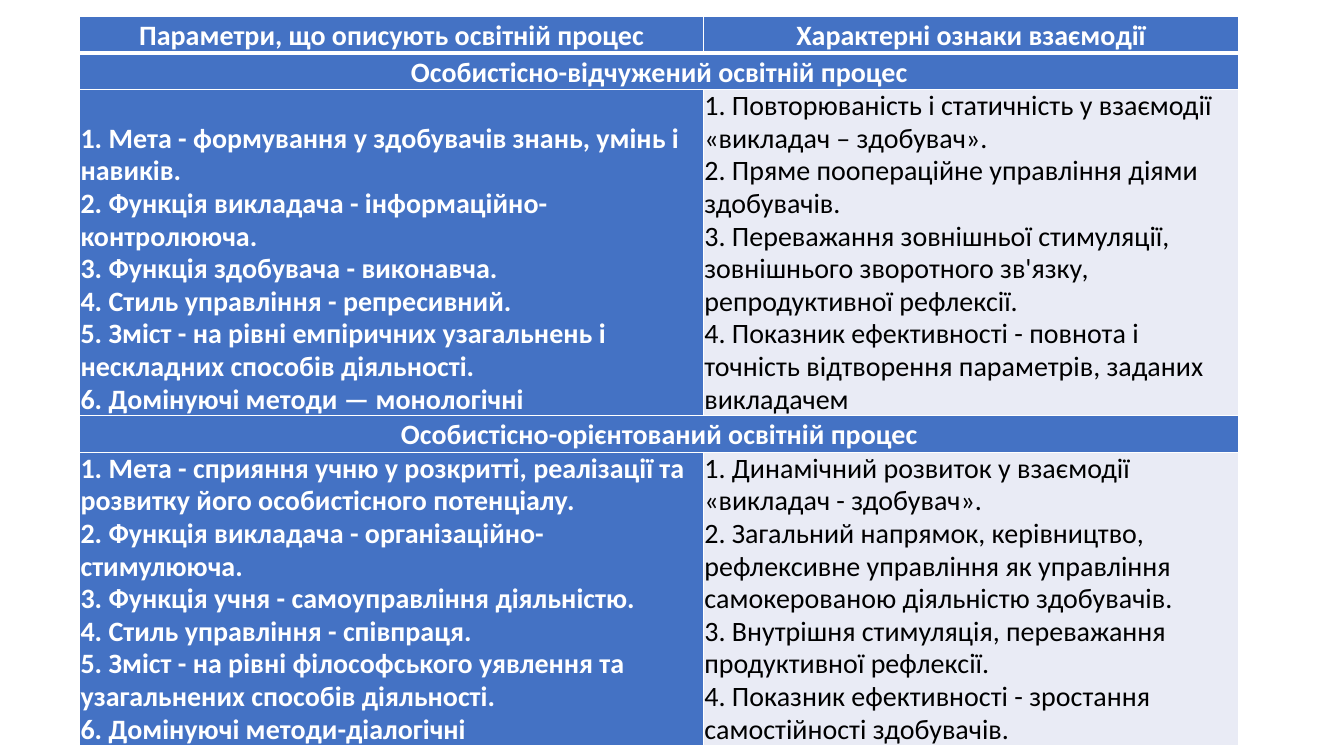
from lxml import etree
from pptx import Presentation
from pptx import util as u
from pptx.dml.color import RGBColor
from pptx.enum import text
from pptx.oxml.ns import qn

BLUE, PALE, WHITE, BLACK = "4472C4", "E9EBF5", "FFFFFF", "000000"

ALIENATED_PARAMETERS = """1. Мета - формування у здобувачів знань, умінь і навиків.
2. Функція викладача - інформаційно-контролююча.
3. Функція здобувача - виконавча.
4. Стиль управління - репресивний.
5. Зміст - на рівні емпіричних узагальнень і нескладних способів діяльності.
6. Домінуючі методи — монологічні"""

ALIENATED_FEATURES = """1. Повторюваність і статичність у взаємодії «викладач – здобувач».
2. Пряме поопераційне управління діями здобувачів.
3. Переважання зовнішньої стимуляції, зовнішнього зворотного зв'язку, репродуктивної рефлексії.
4. Показник ефективності - повнота і точність відтворення параметрів, заданих викладачем"""

ORIENTED_PARAMETERS = """1. Мета - сприяння учню у розкритті, реалізації та розвитку його особистісного потенціалу.
2. Функція викладача - організаційно-стимулююча.
3. Функція учня - самоуправління діяльністю.
4. Стиль управління - співпраця.
5. Зміст - на рівні філософського уявлення та узагальнених способів діяльності.
6. Домінуючі методи-діалогічні"""

ORIENTED_FEATURES = """1. Динамічний розвиток у взаємодії «викладач - здобувач».
2. Загальний напрямок, керівництво, рефлексивне управління як управління самокерованою діяльністю здобувачів.
3. Внутрішня стимуляція, переважання продуктивної рефлексії.
4. Показник ефективності - зростання самостійності здобувачів."""

ROWS = [
    (0.92, ["Параметри, що описують освітній процес", "Характерні ознаки взаємодії"]),
    (0.92, ["Особистісно-відчужений освітній процес"]),
    (8.18, [ALIENATED_PARAMETERS, ALIENATED_FEATURES]),
    (0.92, ["Особистісно-орієнтований освітній процес"]),
    (7.37, [ORIENTED_PARAMETERS, ORIENTED_FEATURES]),
]
COLUMN_WIDTHS = [15.72, 13.49]


def rgb(value):
    """Return the colour for a hex string."""
    return RGBColor.from_string(value)


def set_borders(cell, widths):
    """Draw white cell borders, with widths in points by side letter."""
    properties = cell._tc.get_or_add_tcPr()
    for side, width in widths.items():
        line = etree.SubElement(properties, qn(f"a:ln{side}"), w=str(u.Pt(width)))
        fill = etree.SubElement(line, qn("a:solidFill"))
        etree.SubElement(fill, qn("a:srgbClr"), val=WHITE)


def fill_cell(cell, wording, background, heading):
    """Write a cell's paragraphs and format them as a heading or a list."""
    cell.fill.solid()
    cell.fill.fore_color.rgb = rgb(background)
    cell.vertical_anchor = text.MSO_ANCHOR.BOTTOM
    cell.margin_left = cell.margin_right = u.Cm(0.02)
    cell.margin_top = cell.margin_bottom = 0
    cell.text_frame.text = wording
    for paragraph in cell.text_frame.paragraphs:
        paragraph.alignment = text.PP_ALIGN.CENTER if heading else text.PP_ALIGN.LEFT
        paragraph.line_spacing = 1.07 if heading else 0.95
        for run in paragraph.runs:
            run.font.name = "Calibri"
            run.font.size = u.Pt(20)
            run.font.bold = background == BLUE
            run.font.color.rgb = rgb(WHITE if background == BLUE else BLACK)


def add_comparison(slide):
    """Add the table comparing the two kinds of educational process."""
    heights = [height for height, _ in ROWS]
    comparison = slide.shapes.add_table(
        len(ROWS), len(COLUMN_WIDTHS), u.Cm(2.01), u.Cm(0.41),
        u.Cm(sum(COLUMN_WIDTHS)), u.Cm(sum(heights))).table
    for column, width in zip(comparison.columns, COLUMN_WIDTHS):
        column.width = u.Cm(width)
    for index, (height, wordings) in enumerate(ROWS):
        comparison.rows[index].height = u.Cm(height)
        widths = {"L": 1, "R": 1, "T": 3 if index == 1 else 1, "B": 3 if index == 0 else 1}
        for cell in comparison.rows[index].cells:
            set_borders(cell, widths)
        if len(wordings) == 1:
            comparison.cell(index, 0).merge(comparison.cell(index, 1))
        heading = index == 0 or len(wordings) == 1
        for position, wording in enumerate(wordings):
            background = BLUE if heading or position == 0 else PALE
            fill_cell(comparison.cell(index, position), wording, background, heading)


def main():
    """Build the slide and save it."""
    deck = Presentation()
    deck.slide_width, deck.slide_height = u.Cm(33.87), u.Cm(19.05)
    add_comparison(deck.slides.add_slide(deck.slide_layouts[6]))
    deck.save("out.pptx")


if __name__ == "__main__":
    main()
